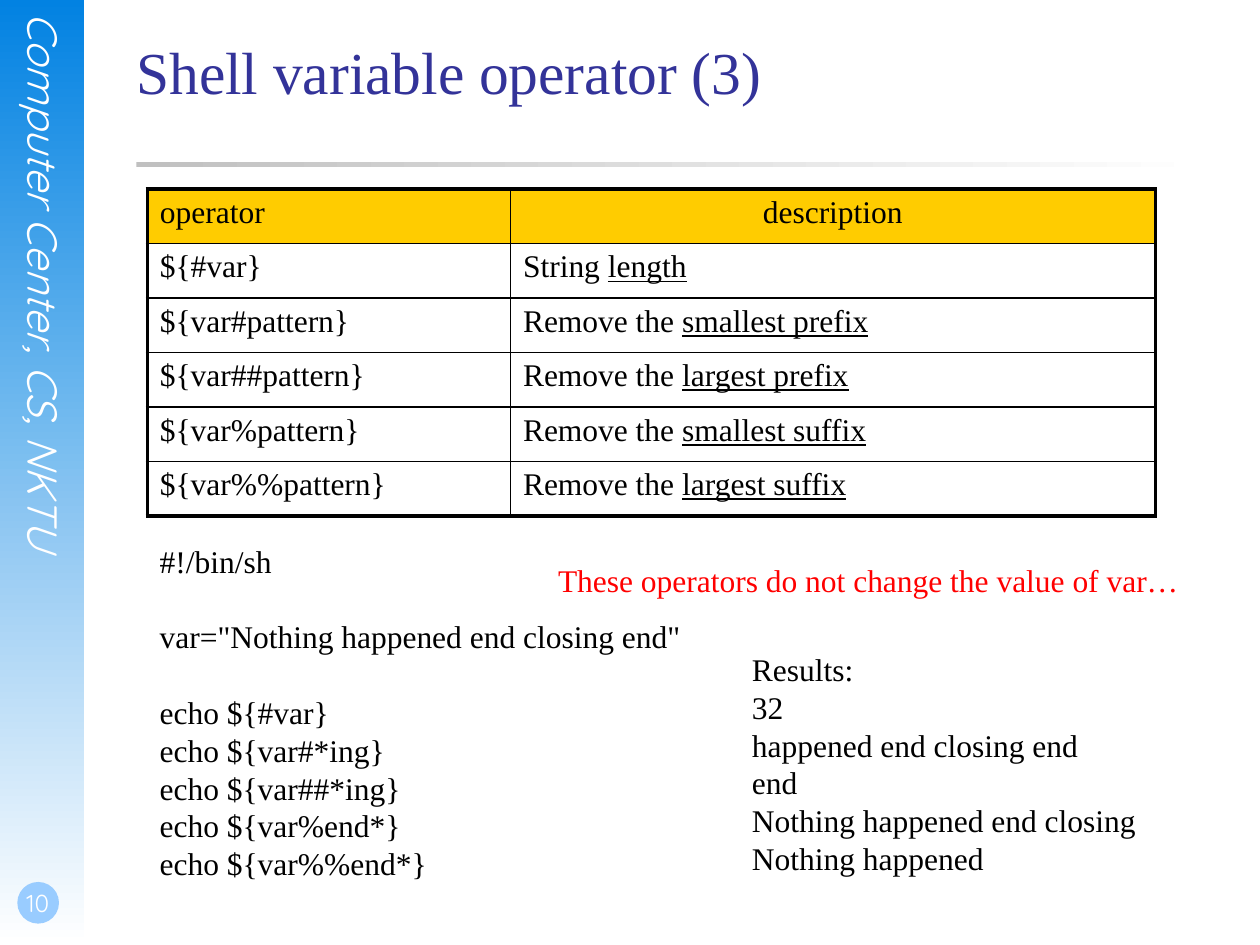
from lxml import etree
from pptx import Presentation
from pptx import util as u
from pptx.dml.color import RGBColor
from pptx.enum import shapes, text
from pptx.oxml import ns

COLORS = {
    "sky": "0282E2", "white": "FFFFFF", "badge": "99CCFF", "silver": "C0C0C0",
    "title": "333399", "header": "FFCC00", "black": "000000", "red": "FF0000",
}
SERIF, SANS = "Times New Roman", "Quicksand"
BODY = {"name": SERIF, "size": u.Pt(18), "color": "black"}
NO_MARGINS = {"margin_left": 0, "margin_top": 0, "margin_right": 0, "margin_bottom": 0}
THICK, THIN = 2.25, 1

OPERATORS = [
    ("${#var}", "String ", "length"),
    ("${var#pattern}", "Remove the ", "smallest prefix"),
    ("${var##pattern}", "Remove the ", "largest prefix"),
    ("${var%pattern}", "Remove the ", "smallest suffix"),
    ("${var%%pattern}", "Remove the ", "largest suffix"),
]
SCRIPT_BLOCKS = [
    ["#!/bin/sh"],
    ['var="Nothing happened end closing end"'],
    ["echo ${#var}", "echo ${var#*ing}", "echo ${var##*ing}",
     "echo ${var%end*}", "echo ${var%%end*}"],
]
RESULTS = [["Results:", "32", "happened end closing end", "end",
            "Nothing happened end closing", "Nothing happened"]]
NOTE = [["These operators do not change the value of var…"]]


def rgb(name):
    return RGBColor.from_string(COLORS[name])


def apply(target, values):
    for name, value in values.items():
        setattr(target, name, value)


def add_run(p, words, fmt):
    r = p.add_run()
    r.text = words
    apply(r.font, {k: v for k, v in fmt.items() if k != "color"})
    r.font.color.rgb = rgb(fmt["color"])
    return r


def add_text(s, box, frame):
    tf = s.shapes.add_textbox(*map(u.Cm, box)).text_frame
    apply(tf, frame)
    return tf


def add_plain(s, kind, box, colors, angle=0):
    sp = s.shapes.add_shape(kind, *map(u.Cm, box))
    sp.shadow.inherit = False
    sp.line.fill.background()
    if len(colors) == 1:
        sp.fill.solid()
        sp.fill.fore_color.rgb = rgb(colors[0])
        return
    sp.fill.gradient()
    sp.fill.gradient_angle = angle
    for stop, color in zip(sp.fill.gradient_stops, colors):
        stop.color.rgb = rgb(color)


def add_sidebar(s, box):
    x, y, w, h = box
    add_plain(s, shapes.MSO_SHAPE.RECTANGLE, box, ["sky", "white"], 270)
    tf = add_text(s, (x + 0.38, y + 0.25, 1.02, 12.98), {**NO_MARGINS, "word_wrap": True})
    tf._txBody.bodyPr.set("vert", "eaVert")
    add_run(tf.paragraphs[0], "Computer Center, CS, NKTU",
            {"name": SANS, "size": u.Pt(24), "italic": True, "color": "white"})
    add_plain(s, shapes.MSO_SHAPE.OVAL, (x + 0.35, y + h - 1.27, 0.84, 0.84), ["badge"])
    tf = add_text(s, (x, y + h - 1.7, 1.48, 1.27), {
        **NO_MARGINS, "margin_left": u.Cm(0.05), "margin_bottom": u.Cm(0.13),
        "word_wrap": True, "vertical_anchor": text.MSO_ANCHOR.BOTTOM})
    tf.paragraphs[0].alignment = text.PP_ALIGN.CENTER
    add_run(tf.paragraphs[0], "10", {"name": SANS, "size": u.Pt(14), "color": "white"})


def add_title(s, box):
    x, y, w, h = box
    add_plain(s, shapes.MSO_SHAPE.RECTANGLE, (x, y + 2.57, w, 0.1), ["silver", "white"])
    title = s.shapes.title
    apply(title, dict(zip(("left", "top", "width", "height"), map(u.Cm, box))))
    tf = title.text_frame
    apply(tf, {**NO_MARGINS, "word_wrap": True, "auto_size": text.MSO_AUTO_SIZE.NONE,
               "vertical_anchor": text.MSO_ANCHOR.TOP})
    p = tf.paragraphs[0]
    p.alignment = text.PP_ALIGN.LEFT
    add_run(p, "Shell variable operator (3)",
            {"name": SERIF, "size": u.Pt(34), "color": "title"})


def set_borders(cell, widths):
    tc_pr = cell._tc.get_or_add_tcPr()
    for side, width in widths.items():
        ln = etree.SubElement(tc_pr, ns.qn(f"a:ln{side}"), w=str(u.Pt(width)))
        fill = etree.SubElement(ln, ns.qn("a:solidFill"))
        etree.SubElement(fill, ns.qn("a:srgbClr"), val=COLORS["black"])


def add_operator_table(s, box):
    rows = [("operator", "description", "")] + OPERATORS
    last = len(rows) - 1
    table = s.shapes.add_table(len(rows), 2, *map(u.Cm, box)).table
    apply(table, {"first_row": False, "horz_banding": False})
    for column, share in zip(table.columns, (0.36, 0.64)):
        column.width = u.Cm(round(box[2] * share, 2))
    for i, (operator, lead, key) in enumerate(rows):
        for j, words in enumerate((operator, lead)):
            cell = table.cell(i, j)
            set_borders(cell, {"L": THIN if j else THICK, "R": THICK if j else THIN,
                               "T": THIN if i else THICK, "B": THICK if i == last else THIN})
            if i:
                cell.fill.background()
            else:
                cell.fill.solid()
                cell.fill.fore_color.rgb = rgb("header")
            p = cell.text_frame.paragraphs[0]
            add_run(p, words, BODY)
            if j and key:
                add_run(p, key, {**BODY, "underline": True})
            elif j:
                p.alignment = text.PP_ALIGN.CENTER


def add_lines(s, box, blocks, color="black"):
    tf = add_text(s, box, {"word_wrap": False})
    line = u.Pt(21.6)
    p = None
    for b, block in enumerate(blocks):
        for i, words in enumerate(block):
            p = tf.add_paragraph() if p else tf.paragraphs[0]
            apply(p, {"line_spacing": line, "space_before": line if b and i == 0 else 0})
            add_run(p, words, {**BODY, "color": color})


def main():
    prs = Presentation()
    apply(prs, {"slide_width": u.Cm(25.4), "slide_height": u.Cm(19.05)})
    s = prs.slides.add_slide(prs.slide_layouts[5])
    add_sidebar(s, (0, 0, 1.7, 19.05))
    add_title(s, (2.75, 0.7, 21.6, 3.18))
    add_operator_table(s, (2.97, 3.81, 20.32, 6.59))
    add_lines(s, (2.97, 10.8, 11.13, 7.19), SCRIPT_BLOCKS)
    add_lines(s, (14.91, 12.98, 8.33, 4.88), RESULTS)
    add_lines(s, (11, 11.18, 13.16, 1.02), NOTE, "red")
    prs.save("out.pptx")


if __name__ == "__main__":
    main()
